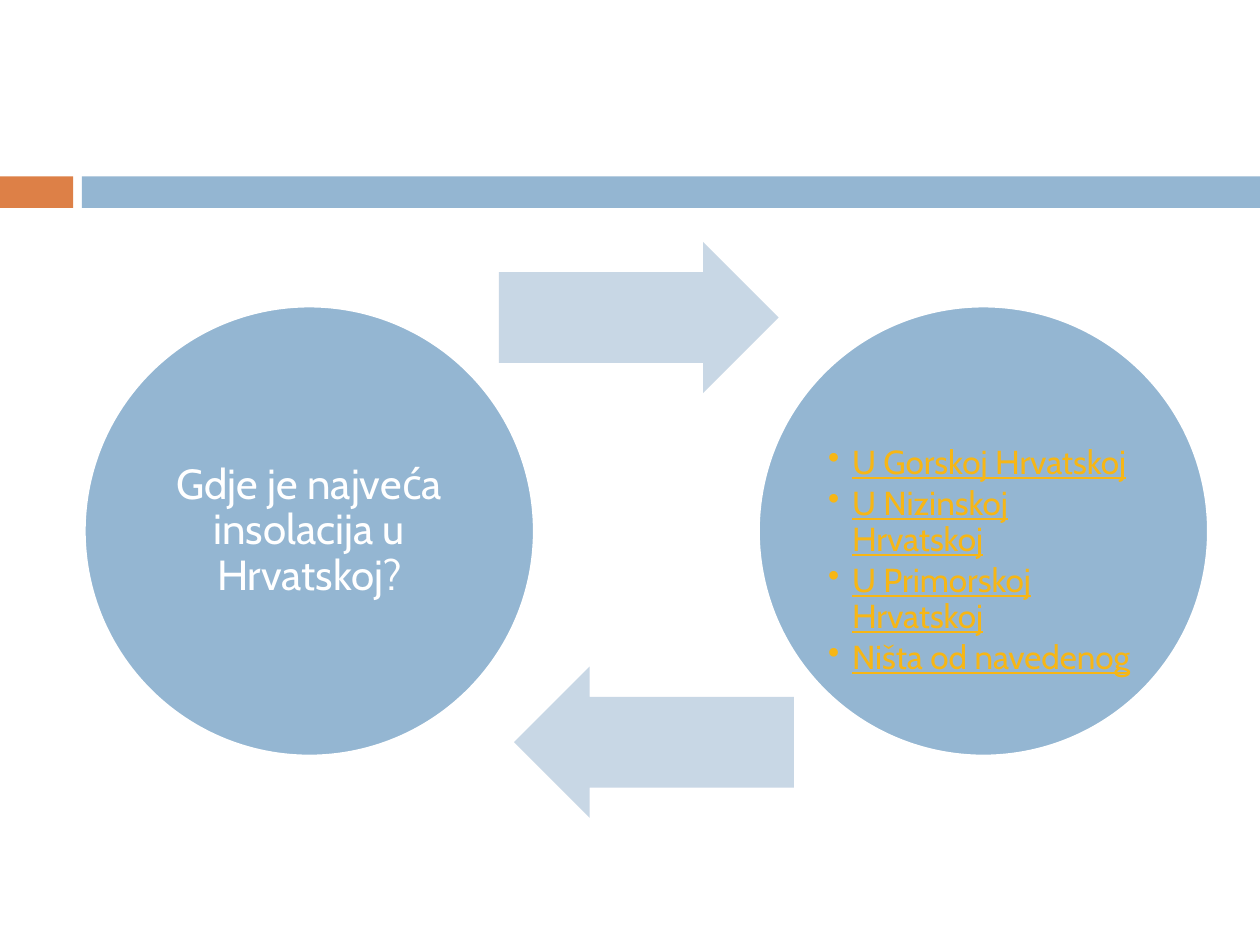
import pptx
import pptx.dml.color
import pptx.enum.shapes
import pptx.enum.text
import pptx.oxml.ns
import pptx.util
from lxml import etree

Inches = pptx.util.Inches
Pt = pptx.util.Pt
Shapes = pptx.enum.shapes.MSO_SHAPE
Align = pptx.enum.text.PP_ALIGN

COLORS = {"orange": "DD8047", "blue": "94B6D2", "pale": "C8D7E5", "white": "FFFFFF", "gold": "F7B615"}
FONT = "Cabin"
QUESTION = ["Gdje je najveća insolacija u Hrvatskoj?"]
ANSWERS = ["U Gorskoj Hrvatskoj", "U Nizinskoj Hrvatskoj", "U Primorskoj Hrvatskoj", "Ništa od navedenog"]

BANDS = [("orange", 0, 0.58), ("blue", 0.65, 9.35)]
BAND_TOP, BAND_HEIGHT = 1.4, 0.25
DIAMETER, CIRCLE_TOP, INSET = 3.57, 2.43, 0.03
CIRCLES = [
    {"left": 0.67, "lines": QUESTION, "color": "white", "bullets": False, "top_inset": INSET,
     "font": {"size": Pt(24), "name": FONT},
     "paragraph": {"alignment": Align.CENTER, "line_spacing": 0.9, "space_after": Pt(8.4)}},
    {"left": 6.02, "lines": ANSWERS, "color": "gold", "bullets": True, "top_inset": 0.51,
     "font": {"size": Pt(19), "name": FONT, "underline": True},
     "paragraph": {"alignment": Align.LEFT, "level": 1, "line_spacing": 0.9, "space_after": Pt(2.85)}},
]
ARROWS = [(3.96, 1.92, 0), (4.08, 5.29, 180)]
ARROW_SIZE = (2.22, 1.2)
ARROW_ADJUSTMENTS = (0.6, 0.5)
BULLET_INDENT = 0.19


def apply(target, values):
    for name, value in values.items():
        setattr(target, name, value)


def color(name):
    return pptx.dml.color.RGBColor.from_string(COLORS[name])


def add_filled(slide, kind, box, fill):
    shape = slide.shapes.add_shape(kind, *map(Inches, box))
    shape.shadow.inherit = False
    shape.fill.solid()
    shape.fill.fore_color.rgb = color(fill)
    shape.line.fill.background()
    return shape


def add_bullet(paragraph):
    properties = paragraph._p.get_or_add_pPr()
    properties.set("marL", str(Inches(BULLET_INDENT)))
    properties.set("indent", str(-Inches(BULLET_INDENT)))
    etree.SubElement(properties, pptx.oxml.ns.qn("a:buChar")).set("char", "•")


def add_circle(slide, circle):
    box = (circle["left"], CIRCLE_TOP, DIAMETER, DIAMETER)
    shape = add_filled(slide, Shapes.OVAL, box, "blue")
    shape.line.color.rgb = color("white")
    shape.line.width = Pt(1.5)
    frame = shape.text_frame
    apply(frame, {
        "word_wrap": True,
        "vertical_anchor": pptx.enum.text.MSO_ANCHOR.MIDDLE,
        "margin_left": Inches(INSET),
        "margin_right": Inches(INSET),
        "margin_bottom": Inches(INSET),
        "margin_top": Inches(circle["top_inset"]),
    })
    for index, line in enumerate(circle["lines"]):
        paragraph = frame.add_paragraph() if index else frame.paragraphs[0]
        apply(paragraph, circle["paragraph"])
        if circle["bullets"]:
            add_bullet(paragraph)
        run = paragraph.add_run()
        run.text = line
        apply(run.font, circle["font"])
        run.font.color.rgb = color(circle["color"])


def add_arrow(slide, left, top, rotation):
    shape = add_filled(slide, Shapes.RIGHT_ARROW, (left, top, *ARROW_SIZE), "pale")
    shape.rotation = rotation
    for index, value in enumerate(ARROW_ADJUSTMENTS):
        shape.adjustments[index] = value


def main():
    presentation = pptx.Presentation()
    apply(presentation, {"slide_width": Inches(10), "slide_height": Inches(7.5)})
    slide = presentation.slides.add_slide(presentation.slide_layouts[6])
    for fill, left, width in BANDS:
        add_filled(slide, Shapes.RECTANGLE, (left, BAND_TOP, width, BAND_HEIGHT), fill)
    for circle, arrow in zip(CIRCLES, ARROWS):
        add_circle(slide, circle)
        add_arrow(slide, *arrow)
    presentation.save("out.pptx")


if __name__ == "__main__":
    main()
